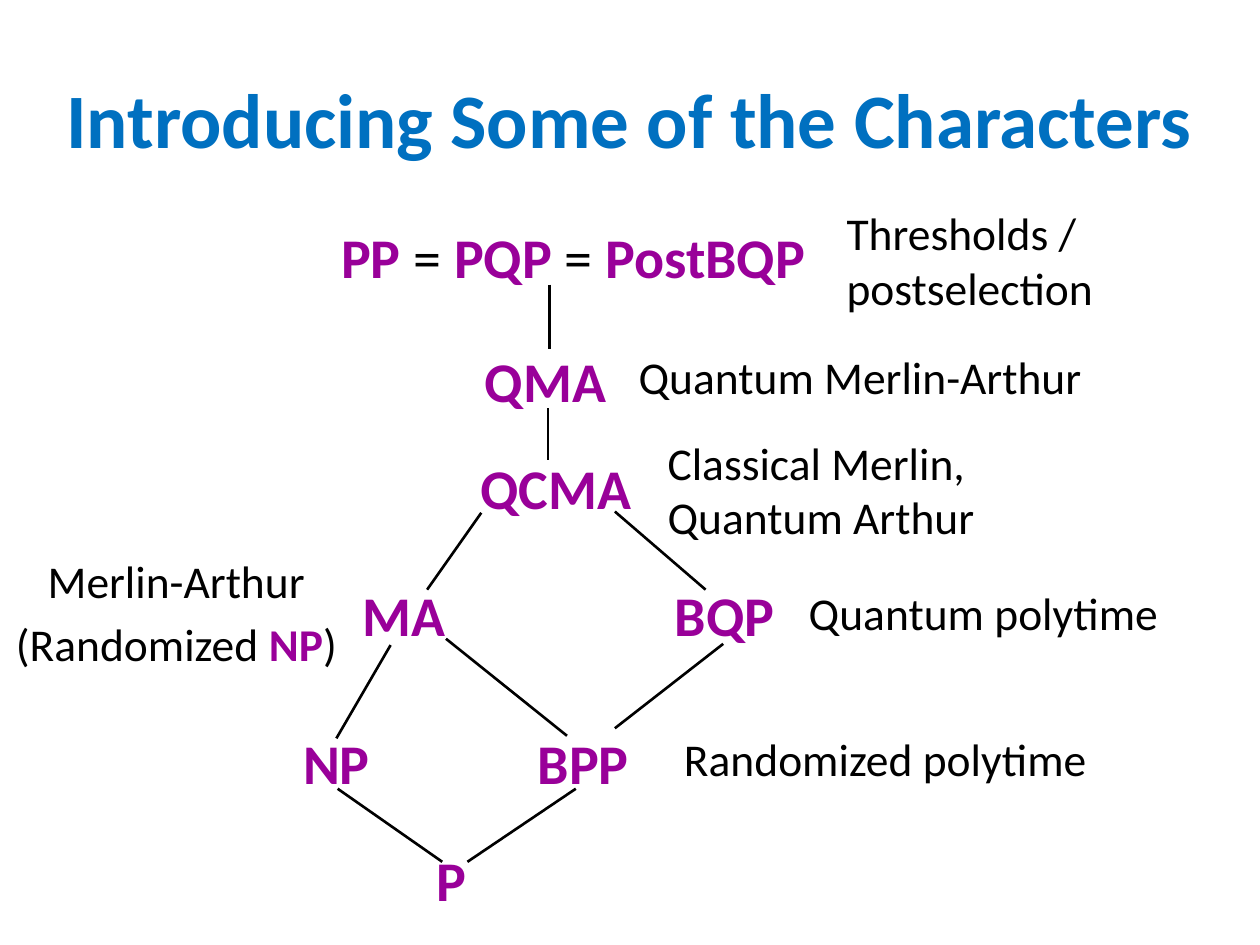
from dataclasses import dataclass

from lxml.etree import SubElement
from pptx import Presentation
from pptx.dml.color import RGBColor
from pptx.enum.shapes import MSO_CONNECTOR
from pptx.enum.text import MSO_ANCHOR, PP_ALIGN
from pptx.oxml.ns import qn
from pptx.util import Inches, Pt

COLORS = {"title": "0070C0", "class": "990099", "text": "000000"}
FONT = "Calibri"
BOX_H = 0.75
NODE_W = 1.42


@dataclass
class Label:
    """Text box whose parts between asterisks are complexity class names."""
    text: str
    left: float
    top: float
    width: float = NODE_W
    size: int = 32
    align: PP_ALIGN = PP_ALIGN.CENTER


@dataclass
class Edge:
    x1: float
    y1: float
    x2: float
    y2: float


def note(text: str, left: float, top: float, width: float,
         align: PP_ALIGN = PP_ALIGN.LEFT) -> Label:
    return Label(text, left, top, width, 26, align)


CLASSES = [
    Label("*PP* = *PQP* = *PostBQP*", 2.01, 1.72, 5.08),
    Label("*QMA*", 3.62, 2.7),
    Label("*QCMA*", 3.7, 3.55),
    Label("*MA*", 2.5, 4.56),
    Label("*BQP*", 5.04, 4.56),
    Label("*NP*", 1.96, 5.73),
    Label("*BPP*", 3.92, 5.73),
    Label("*P*", 2.87, 6.66),
]

NOTES = [
    note("Thresholds / postselection", 6.62, 1.58, 2.68),
    note("Quantum Merlin-Arthur", 4.97, 2.72, 4.97),
    note("Classical Merlin, Quantum Arthur", 5.2, 3.4, 3.44),
    note("Merlin-Arthur\n(Randomized *NP*)", -0.06, 4.34, 2.92, PP_ALIGN.CENTER),
    note("Quantum polytime", 6.32, 4.59, 2.98),
    note("Randomized polytime", 5.33, 5.75, 4.18),
]

EDGES = [
    Edge(4.36, 2.26, 4.36, 2.77),  # PQP - QMA
    Edge(4.35, 3.24, 4.35, 3.65),  # QMA - QCMA
    Edge(3.82, 4.07, 3.39, 4.68),  # QCMA - MA
    Edge(4.88, 4.06, 5.6, 4.68),   # QCMA - BQP
    Edge(3.1, 5.12, 2.67, 5.86),   # MA - NP
    Edge(3.54, 5.07, 4.5, 5.84),   # MA - BPP
    Edge(5.74, 5.11, 4.88, 5.78),  # BQP - BPP
    Edge(2.68, 6.26, 3.51, 6.84),  # NP - P
    Edge(4.57, 6.26, 3.71, 6.84),  # BPP - P
]


def color(name: str) -> RGBColor:
    return RGBColor.from_string(COLORS[name])


def add_title(s, text: str) -> None:
    sp = s.shapes.add_textbox(Inches(0.25), Inches(0.42), Inches(9.5), Inches(1.02))
    tf = sp.text_frame
    tf.word_wrap = True
    tf.vertical_anchor = MSO_ANCHOR.MIDDLE
    p = tf.paragraphs[0]
    p.text = text
    p.alignment = PP_ALIGN.CENTER
    p.font.name, p.font.size, p.font.bold = FONT, Pt(44), True
    p.font.color.rgb = color("title")


def add_label(s, label: Label) -> None:
    sp = s.shapes.add_textbox(Inches(label.left), Inches(label.top),
                              Inches(label.width), Inches(BOX_H))
    tf = sp.text_frame
    tf.word_wrap = True
    for i, line in enumerate(label.text.split("\n")):
        p = tf.add_paragraph() if i else tf.paragraphs[0]
        p.alignment = label.align
        p.space_before = Pt(round(0.2 * label.size) if i else 0)
        p.font.name, p.font.size = FONT, Pt(label.size)
        for j, part in enumerate(line.split("*")):
            if part:
                is_class = j % 2 == 1
                r = p.add_run()
                r.text = part
                r.font.bold = is_class
                r.font.color.rgb = color("class" if is_class else "text")


def add_edge(s, edge: Edge) -> None:
    line = s.shapes.add_connector(MSO_CONNECTOR.STRAIGHT,
                                  Inches(edge.x1), Inches(edge.y1),
                                  Inches(edge.x2), Inches(edge.y2))
    line.line.color.rgb = color("text")
    line.line.width = Pt(1.5)
    SubElement(line._element.spPr, qn("a:effectLst"))


def main() -> None:
    prs = Presentation()
    prs.slide_width, prs.slide_height = Inches(10), Inches(7.5)
    s = prs.slides.add_slide(prs.slide_layouts[6])
    add_title(s, "Introducing Some of the Characters")
    for label in CLASSES:
        add_label(s, label)
    for edge in EDGES:
        add_edge(s, edge)
    for label in NOTES:
        add_label(s, label)
    prs.save("out.pptx")


if __name__ == "__main__":
    main()
